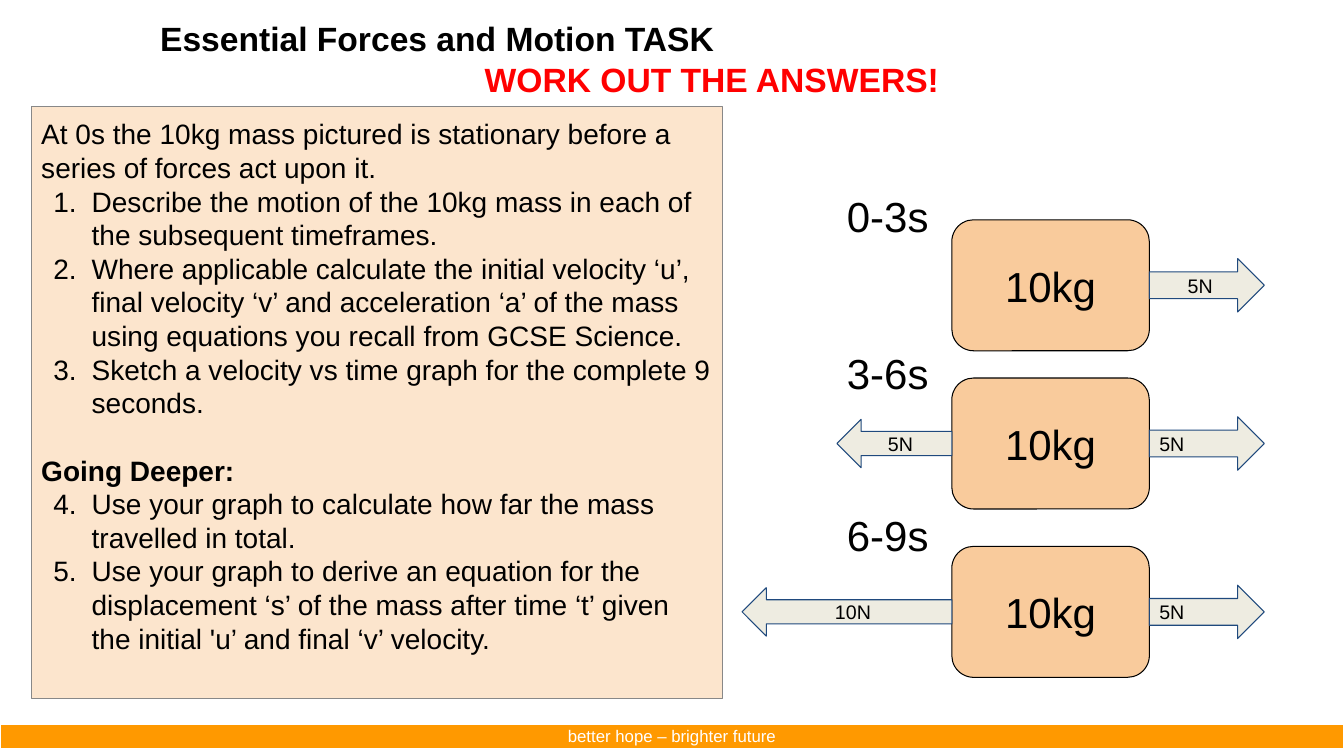
from dataclasses import dataclass

from lxml.etree import SubElement
from pptx import Presentation
from pptx.dml.color import RGBColor
from pptx.enum.shapes import MSO_SHAPE
from pptx.enum.text import MSO_ANCHOR, MSO_AUTO_SIZE, PP_ALIGN
from pptx.oxml.ns import qn
from pptx.util import Inches, Pt


@dataclass(frozen=True)
class Theme:
    font: str = "Arial"
    ink: str = "000000"
    white: str = "FFFFFF"
    alert: str = "FF0000"
    footer: str = "FF9900"
    panel: str = "FCE5CD"
    panel_line: str = "888888"
    mass: str = "F9CB9C"
    arrow: str = "EEECE1"
    arrow_line: str = "1F497D"
    heading_size: int = 24
    body_size: int = 20
    body_line: int = 24
    mass_size: int = 30
    force_size: int = 14
    footer_size: int = 12


THEME = Theme()
WIDTH, HEIGHT = Inches(13.33), Inches(7.5)

# Diagram grid, in percent of the slide's width (across) and height (down)
MASS_LEFT, MASS_WIDTH, MASS_HEIGHT = 70.82, 14.7, 17.33
FORCE_WIDTH = 8.55
RIGHT_HEIGHT, LEFT_HEIGHT = 7.07, 6.4
LABEL_HEIGHT = 10.53

INTRO = ("At 0s the 10kg mass pictured is stationary before a "
         "series of forces act upon it.")
TASKS = [
    "Describe the motion of the 10kg mass in each of the subsequent timeframes.",
    "Where applicable calculate the initial velocity ‘u’, final velocity ‘v’ and "
    "acceleration ‘a’ of the mass using equations you recall from GCSE Science.",
    "Sketch a velocity vs time graph for the complete 9 seconds.",
]
DEEPER_TASKS = [
    "Use your graph to calculate how far the mass travelled in total.",
    "Use your graph to derive an equation for the displacement ‘s’ of the mass "
    "after time ‘t’ given the initial 'u’ and final ‘v’ velocity.",
]


def place(left, top, width, height):
    """Turn percentages of the slide into lengths."""
    return [int(share * full / 100) for share, full in
            zip((left, top, width, height), (WIDTH, HEIGHT, WIDTH, HEIGHT))]


def write(paragraph, text, size, color=THEME.ink, bold=False, align=PP_ALIGN.LEFT):
    paragraph.alignment = align
    run = paragraph.add_run()
    run.text = text
    run.font.name = THEME.font
    run.font.size = Pt(size)
    run.font.bold = bold
    run.font.color.rgb = RGBColor.from_string(color)


def set_frame(frame, inset=0.1, anchor=MSO_ANCHOR.TOP):
    frame.word_wrap = True
    frame.vertical_anchor = anchor
    frame.margin_left = frame.margin_right = Inches(0.1)
    frame.margin_top = frame.margin_bottom = Inches(inset)


def add_block(slide, kind, area, fill, line, line_width=0.75, inset=0.1,
              anchor=MSO_ANCHOR.MIDDLE):
    shape = slide.shapes.add_shape(kind, *place(*area))
    shape.shadow.inherit = False
    shape.fill.solid()
    shape.fill.fore_color.rgb = RGBColor.from_string(fill)
    shape.line.color.rgb = RGBColor.from_string(line)
    shape.line.width = Pt(line_width)
    set_frame(shape.text_frame, inset, anchor)
    return shape.text_frame


def add_label(slide, area, text, size, inset=0.1, **text_format):
    frame = slide.shapes.add_textbox(*place(*area)).text_frame
    set_frame(frame, inset)
    write(frame.paragraphs[0], text, size, **text_format)
    return frame


def number(paragraph, start):
    """Give the paragraph a hanging number in a list that begins at start."""
    properties = paragraph._p.get_or_add_pPr()
    properties.set("marL", str(Inches(0.5)))
    properties.set("indent", str(Inches(-0.38)))
    color = SubElement(properties, qn("a:buClr"))
    SubElement(color, qn("a:srgbClr"), val=THEME.ink)
    SubElement(properties, qn("a:buAutoNum"), type="arabicPeriod", startAt=str(start))


def add_task_panel(slide):
    frame = add_block(slide, MSO_SHAPE.RECTANGLE, (2.33, 14.13, 51.46, 78.27),
                      THEME.panel, THEME.panel_line, anchor=MSO_ANCHOR.TOP)
    write(frame.paragraphs[0], INTRO, THEME.body_size)

    def add_tasks(tasks, start):
        for task in tasks:
            paragraph = frame.add_paragraph()
            number(paragraph, start)
            write(paragraph, task, THEME.body_size)

    add_tasks(TASKS, 1)
    heading = frame.add_paragraph()
    heading.space_before = Pt(THEME.body_line)
    write(heading, "Going Deeper:", THEME.body_size, bold=True)
    add_tasks(DEEPER_TASKS, len(TASKS) + 1)
    for paragraph in frame.paragraphs:
        paragraph.line_spacing = Pt(THEME.body_line)


def add_force(slide, kind, left, middle, width, height, text, align):
    frame = add_block(slide, kind, (left, middle - height / 2, width, height),
                      THEME.arrow, THEME.arrow_line)
    write(frame.paragraphs[0], text, THEME.force_size, align=align)


def add_timeframe(slide, period, label_top, mass_top, left_force=None,
                  left_width=FORCE_WIDTH, right_align=PP_ALIGN.LEFT):
    """Draw the mass with the forces that act on it during one period."""
    middle = mass_top + MASS_HEIGHT / 2
    mass = add_block(slide, MSO_SHAPE.ROUNDED_RECTANGLE,
                     (MASS_LEFT, mass_top, MASS_WIDTH, MASS_HEIGHT),
                     THEME.mass, THEME.ink)
    write(mass.paragraphs[0], "10kg", THEME.mass_size, align=PP_ALIGN.CENTER)
    add_force(slide, MSO_SHAPE.RIGHT_ARROW, MASS_LEFT + MASS_WIDTH, middle,
              FORCE_WIDTH, RIGHT_HEIGHT, "5N", right_align)
    if left_force:
        add_force(slide, MSO_SHAPE.LEFT_ARROW, MASS_LEFT - left_width, middle,
                  left_width, LEFT_HEIGHT, left_force, PP_ALIGN.CENTER)
    add_label(slide, (MASS_LEFT - FORCE_WIDTH, label_top, FORCE_WIDTH, LABEL_HEIGHT),
              period, THEME.mass_size)


def main():
    presentation = Presentation()
    presentation.slide_width, presentation.slide_height = WIDTH, HEIGHT
    slide = presentation.slides.add_slide(presentation.slide_layouts[6])

    footer = add_block(slide, MSO_SHAPE.RECTANGLE, (0, 95.73, 100, 3.33),
                       THEME.footer, THEME.white, line_width=1.5, inset=0.05)
    write(footer.paragraphs[0], "better hope – brighter future", THEME.footer_size,
          color=THEME.white, align=PP_ALIGN.CENTER)
    add_label(slide, (11.18, 1.07, 51.09, 7.07), "Essential Forces and Motion TASK",
              THEME.heading_size, bold=True)
    add_task_panel(slide)
    add_timeframe(slide, "0-3s", 23.87, 29.07, right_align=PP_ALIGN.CENTER)
    add_timeframe(slide, "3-6s", 44.67, 50, left_force="5N")
    add_timeframe(slide, "6-9s", 66.13, 72.27, left_force="10N", left_width=15.6)
    call = add_label(slide, (35.11, 7.07, 35.71, 6.67), "WORK OUT THE ANSWERS!",
                     THEME.heading_size, inset=0.05, color=THEME.alert, bold=True,
                     align=PP_ALIGN.CENTER)
    call.word_wrap = False
    call.auto_size = MSO_AUTO_SIZE.SHAPE_TO_FIT_TEXT

    presentation.save("out.pptx")


if __name__ == "__main__":
    main()
